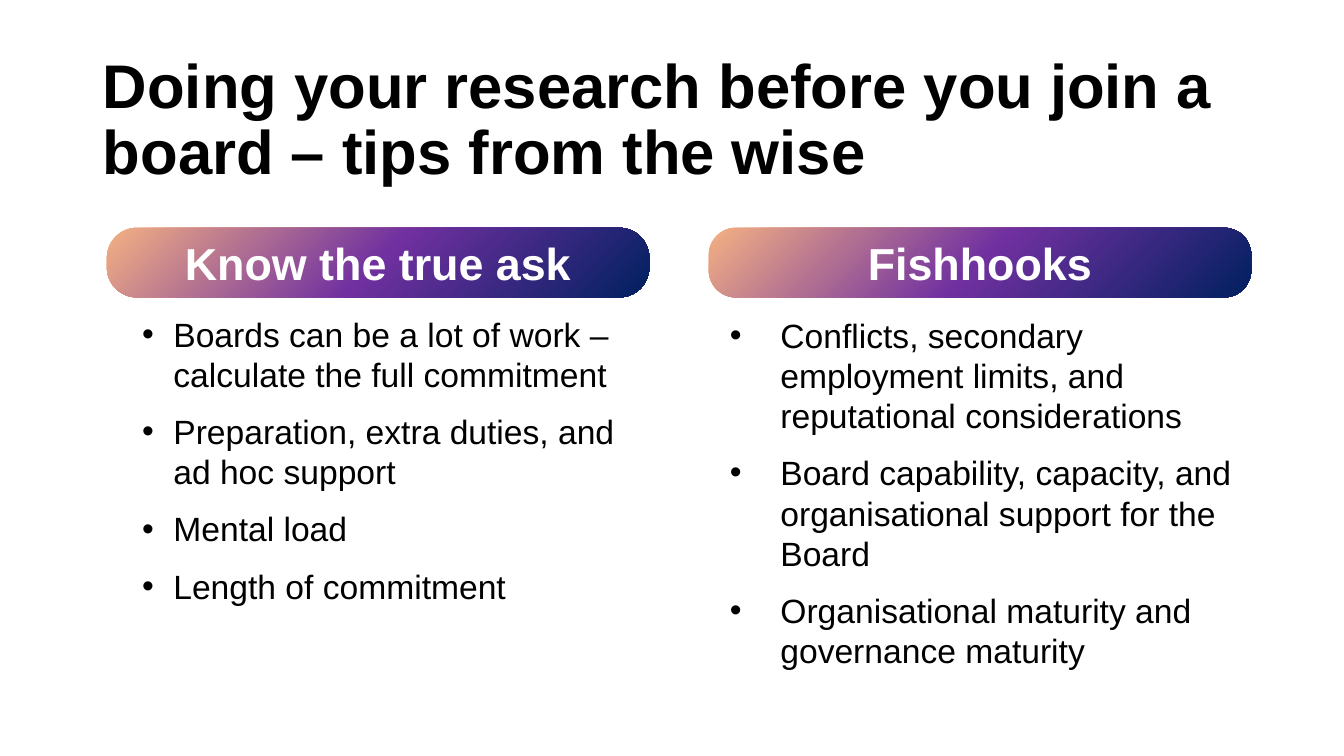
import copy
from dataclasses import dataclass

import pptx
import pptx.dml.color
import pptx.enum.shapes
import pptx.enum.text
import pptx.oxml.ns
import pptx.util
from lxml import etree

EMU_PER_PX = 9144
TWO_CONTENT_LAYOUT = 3


@dataclass(frozen=True)
class Theme:
    """Colours, font and type sizes of the slide."""
    font: str = "Arial"
    ink: str = "000000"
    heading_ink: str = "FFFFFF"
    gradient: tuple = ((0, "F4B183"), (0.5, "7030A0"), (1, "002060"))
    title_size: int = 44
    heading_size: int = 32
    list_size: int = 24


THEME = Theme()

TITLE = "Doing your research before you join a board – tips from the wise"
ASK_TIPS = (
    "Boards can be a lot of work – calculate the full commitment",
    "Preparation, extra duties, and ad hoc support",
    "Mental load",
    "Length of commitment",
)
FISHHOOK_TIPS = (
    "Conflicts, secondary employment limits, and reputational considerations",
    "Board capability, capacity, and organisational support for the Board",
    "Organisational maturity and governance maturity",
)


def px(length):
    """Turn pixels into EMU."""
    return pptx.util.Emu(length * EMU_PER_PX)


def rgb(code):
    """Turn a hex code into a colour."""
    return pptx.dml.color.RGBColor.from_string(code)


def place(part, left, top, width, height):
    """Move a part to the given box in pixels."""
    part.left, part.top = px(left), px(top)
    part.width, part.height = px(width), px(height)


def write(paragraph, words, size, colour, bold=False):
    """Add one formatted run to a paragraph."""
    run = paragraph.add_run()
    run.text = words
    run.font.name = THEME.font
    run.font.size = pptx.util.Pt(size)
    run.font.bold = bold
    run.font.color.rgb = rgb(colour)


def add_child(parent, tag, **settings):
    """Append a drawing element with its settings and return it."""
    return etree.SubElement(parent, pptx.oxml.ns.qn(tag), settings)


def set_bullet(paragraph, indent, hang):
    """Give a paragraph a round bullet with a hanging indent."""
    properties = paragraph._p.get_or_add_pPr()
    properties.set("marL", str(px(indent)))
    properties.set("indent", str(-px(hang)))
    add_child(properties, "a:buFont", typeface=THEME.font)
    add_child(properties, "a:buChar", char="•")


def set_square_round_rect(body):
    """Give a placeholder a rounded rectangle outline of zero radius."""
    outline = add_child(body._element.spPr, "a:prstGeom", prst="roundRect")
    guides = add_child(outline, "a:avLst")
    add_child(guides, "a:gd", name="adj", fmla="val 0")


def add_title(title, box):
    """Fill the title placeholder, left aligned and centred in height."""
    place(title, *box)
    frame = title.text_frame
    frame.word_wrap = True
    frame.auto_size = pptx.enum.text.MSO_AUTO_SIZE.NONE
    frame.vertical_anchor = pptx.enum.text.MSO_ANCHOR.MIDDLE
    paragraph = frame.paragraphs[0]
    paragraph.alignment = pptx.enum.text.PP_ALIGN.LEFT
    paragraph.line_spacing = 0.9
    write(paragraph, TITLE, THEME.title_size, THEME.ink, bold=True)


def add_heading(slide, words, box, roundness):
    """Draw a rounded gradient bar holding a column heading."""
    bar = slide.shapes.add_shape(
        pptx.enum.shapes.MSO_SHAPE.ROUNDED_RECTANGLE, *map(px, box))
    bar.adjustments[0] = roundness
    bar.shadow.inherit = False
    bar.line.fill.background()
    bar.fill.gradient()
    bar.fill.gradient_angle = 315
    stop_list = bar._element.spPr.find(".//" + pptx.oxml.ns.qn("a:gsLst"))
    stop_list.append(copy.deepcopy(stop_list[-1]))
    for stop, (position, colour) in zip(bar.fill.gradient_stops, THEME.gradient):
        stop.position = position
        stop.color.rgb = rgb(colour)
    bar.text_frame.word_wrap = True
    bar.text_frame.vertical_anchor = pptx.enum.text.MSO_ANCHOR.MIDDLE
    paragraph = bar.text_frame.paragraphs[0]
    paragraph.alignment = pptx.enum.text.PP_ALIGN.CENTER
    paragraph.space_after = pptx.util.Pt(3)
    write(paragraph, words, THEME.heading_size, THEME.heading_ink, bold=True)


def add_tips(body, tips, box, indent, hang):
    """Fill a body placeholder with bulleted tips."""
    place(body, *box)
    set_square_round_rect(body)
    frame = body.text_frame
    frame.word_wrap = True
    frame.auto_size = pptx.enum.text.MSO_AUTO_SIZE.NONE
    for index, tip in enumerate(tips):
        paragraph = frame.add_paragraph() if index else frame.paragraphs[0]
        paragraph.space_before = pptx.util.Pt(0)
        paragraph.space_after = pptx.util.Pt(12)
        set_bullet(paragraph, indent, hang)
        write(paragraph, tip, THEME.list_size, THEME.ink)


def add_column(slide, body, heading, tips, box, roundness, list_offset, indent, hang):
    """Place a heading bar with its list of tips below it."""
    left, top, width, height = box
    shift, drop = list_offset
    add_heading(slide, heading, (left, top, width, 69), roundness)
    add_tips(body, tips, (left + shift, top + drop, width + 14, height - drop), indent, hang)


def main():
    """Build and save the slide."""
    deck = pptx.Presentation()
    deck.slide_width = pptx.util.Inches(13.33)
    deck.slide_height = px(750)
    slide = deck.slides.add_slide(deck.slide_layouts[TWO_CONTENT_LAYOUT])
    title, ask_body, fishhook_body = slide.placeholders
    add_title(title, (92, 48, 1150, 145))
    add_column(slide, ask_body, "Know the true ask", ASK_TIPS,
               (106, 226, 538, 504), 0.43, (0, 80), 56, 31)
    add_column(slide, fishhook_body, "Fishhooks", FISHHOOK_TIPS,
               (703, 226, 538, 505), 0.39, (-14, 81), 75, 50)
    deck.save("out.pptx")


if __name__ == "__main__":
    main()
